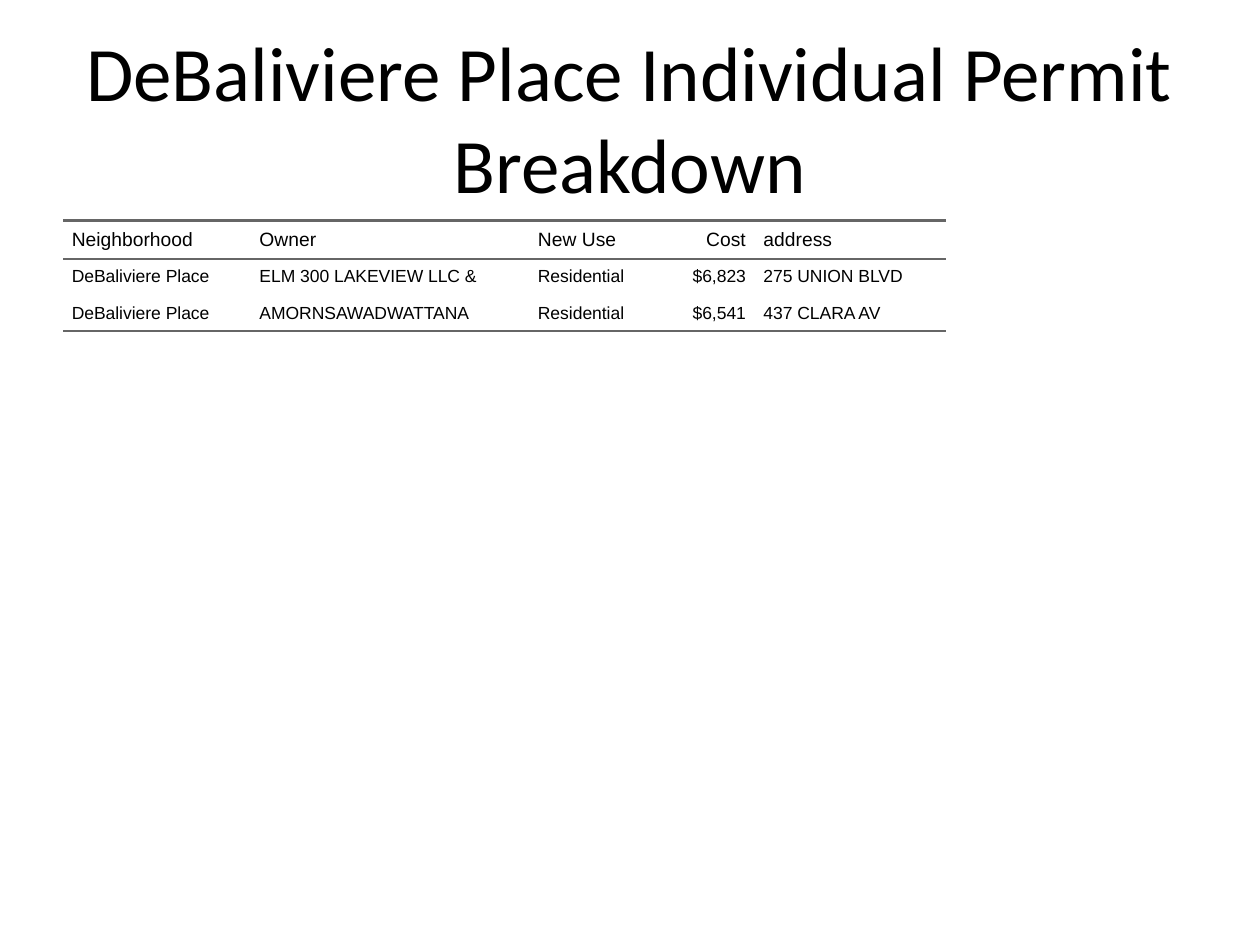
import dataclasses

import lxml.etree
import pptx
import pptx.dml.color
import pptx.enum.text
import pptx.oxml.ns
import pptx.util

ALIGN = pptx.enum.text.PP_ALIGN
MIDDLE = pptx.enum.text.MSO_ANCHOR.MIDDLE


@dataclasses.dataclass(frozen=True)
class Theme:
    """Colours, fonts and sizes of the slide."""

    text: str = "000000"
    rule: str = "666666"
    background: str = "FFFFFF"
    title_font: str = "Calibri"
    table_font: str = "Arial"
    title_size: float = 44
    header_size: float = 11
    body_size: float = 10
    rule_width: float = 1.5
    side_margin: float = 0.07
    vertical_margin: float = 0.06


THEME = Theme()
TITLE = "DeBaliviere Place Individual Permit Breakdown"
PERMITS = [
    ["Neighborhood", "Owner", "New Use", "Cost", "address"],
    ["DeBaliviere Place", "ELM 300 LAKEVIEW LLC &", "Residential", "$6,823", "275 UNION BLVD"],
    ["DeBaliviere Place", "AMORNSAWADWATTANA", "Residential", "$6,541", "437 CLARA AV"],
]
COLUMN_WIDTHS = [1.49, 2.21, 1.04, 0.75, 1.52]
COST_COLUMN = PERMITS[0].index("Cost")
ROW_HEIGHT = 0.25


def write_text(frame, text, *, font, size, align=ALIGN.LEFT):
    """Write one formatted paragraph into a text frame."""
    frame.word_wrap = True
    paragraph = frame.paragraphs[0]
    paragraph.alignment = align
    run = paragraph.add_run()
    run.text = text
    run.font.name = font
    run.font.size = pptx.util.Pt(size)
    run.font.bold = False
    run.font.color.rgb = pptx.dml.color.RGBColor.from_string(THEME.text)


def set_borders(cell, ruled):
    """Draw the named horizontal edges and clear all other edges."""
    properties = cell._tc.get_or_add_tcPr()
    for index, edge in enumerate(["lnL", "lnR", "lnT", "lnB"]):
        line = lxml.etree.Element(pptx.oxml.ns.qn(f"a:{edge}"))
        if edge in ruled:
            line.set("w", str(pptx.util.Pt(THEME.rule_width)))
            fill = lxml.etree.SubElement(line, pptx.oxml.ns.qn("a:solidFill"))
            lxml.etree.SubElement(fill, pptx.oxml.ns.qn("a:srgbClr"), val=THEME.rule)
        else:
            lxml.etree.SubElement(line, pptx.oxml.ns.qn("a:noFill"))
        properties.insert(index, line)


def add_title(slide, box):
    """Place the centred title in its box."""
    frame = slide.shapes.add_textbox(*box).text_frame
    frame.vertical_anchor = MIDDLE
    write_text(frame, TITLE, font=THEME.title_font, size=THEME.title_size, align=ALIGN.CENTER)


def fill_cell(cell, text, row, column):
    """Format one table cell by its row and column."""
    cell.margin_left = cell.margin_right = pptx.util.Inches(THEME.side_margin)
    cell.margin_top = cell.margin_bottom = pptx.util.Inches(THEME.vertical_margin)
    cell.vertical_anchor = MIDDLE
    cell.fill.background()
    ruled = {"lnT"} if row < 2 else set()
    if row in (0, len(PERMITS) - 1):
        ruled.add("lnB")
    set_borders(cell, ruled)
    write_text(
        cell.text_frame,
        text,
        font=THEME.table_font,
        size=THEME.body_size if row else THEME.header_size,
        align=ALIGN.RIGHT if column == COST_COLUMN else ALIGN.LEFT,
    )


def add_permit_table(slide, box):
    """Place the permit table at the top left of its box."""
    left, top, width, height = box
    table = slide.shapes.add_table(
        len(PERMITS),
        len(COLUMN_WIDTHS),
        left,
        top,
        pptx.util.Inches(sum(COLUMN_WIDTHS)),
        pptx.util.Inches(ROW_HEIGHT * len(PERMITS)),
    ).table
    table.first_row = table.horz_banding = False
    for column, column_width in zip(table.columns, COLUMN_WIDTHS):
        column.width = pptx.util.Inches(column_width)
    for row, values in enumerate(PERMITS):
        for column, text in enumerate(values):
            fill_cell(table.cell(row, column), text, row, column)


def main():
    """Build and save the slide."""
    presentation = pptx.Presentation()
    presentation.slide_width = pptx.util.Inches(10)
    presentation.slide_height = pptx.util.Inches(7.5)
    slide = presentation.slides.add_slide(presentation.slide_layouts[6])
    slide.background.fill.solid()
    slide.background.fill.fore_color.rgb = pptx.dml.color.RGBColor.from_string(THEME.background)

    def region(left, top, width, height):
        """Turn shares of the slide into a box."""
        across, down = presentation.slide_width, presentation.slide_height
        return int(left * across), int(top * down), int(width * across), int(height * down)

    add_title(slide, region(0.05, 0.04, 0.9, 1 / 6))
    add_permit_table(slide, region(0.05, 7 / 30, 0.9, 0.66))
    presentation.save("out.pptx")


if __name__ == "__main__":
    main()
